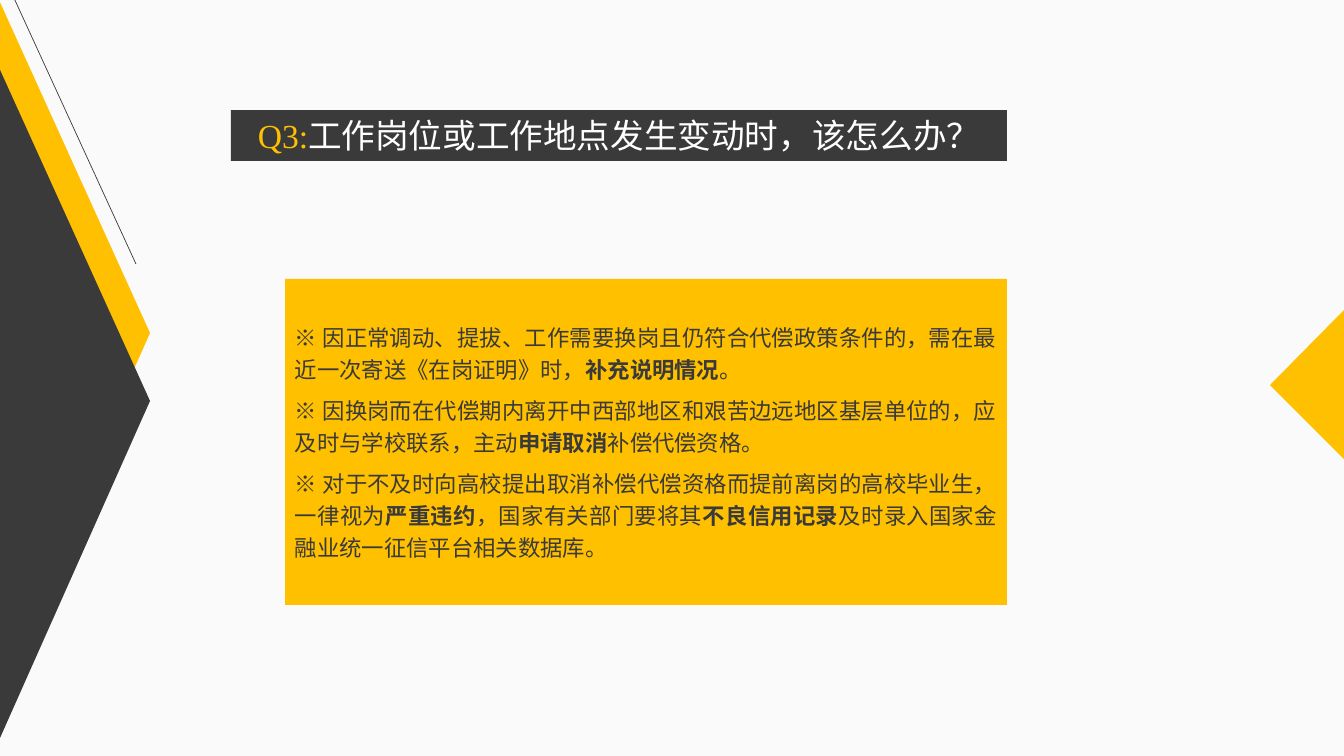
from dataclasses import dataclass

from lxml import etree
from pptx import Presentation
from pptx.dml.color import RGBColor
from pptx.enum.shapes import MSO_CONNECTOR, MSO_SHAPE
from pptx.enum.text import MSO_ANCHOR, PP_ALIGN
from pptx.oxml.ns import qn
from pptx.util import Pt

LINE = MSO_CONNECTOR.STRAIGHT
RECT = MSO_SHAPE.RECTANGLE
MIDDLE = MSO_ANCHOR.MIDDLE
CENTER, JUSTIFY = PP_ALIGN.CENTER, PP_ALIGN.JUSTIFY

WIDTH, HEIGHT = 1344, 756
SCALE = 12192000 / WIDTH
SANS, SERIF = "Noto Sans CJK SC", "Times New Roman"
DARK, AMBER, GOLD = "3A3A3A", "FFC001", "FFC000"
WHITE, PAPER = "FFFFFF", "FAFAFA"


@dataclass
class Outline:
    points: list[tuple[int, int]]
    color: str


@dataclass
class Box:
    left: int
    top: int
    width: int
    height: int


@dataclass
class Piece:
    text: str
    bold: bool = False
    color: str = DARK
    size: int = 16
    font: str = SANS


OUTLINES = [
    Outline([(-9, 0), (-1, 0), (150, 333), (-9, 690)], AMBER),
    Outline([(-9, 50), (150, 401), (-8, 756), (-9, 756)], DARK),
    Outline([(1344, 310), (1344, 459), (1270, 385)], AMBER),
]
TITLE_BOX = Box(231, 110, 776, 51)
PANEL_BOX = Box(285, 279, 722, 326)
BODY_BOX = Box(285, 314, 722, 255)

TITLE = [
    Piece("Q3:", color=GOLD, size=24, font=SERIF),
    Piece("工作岗位或工作地点发生变动时，该怎么办？", color=WHITE, size=24),
]
BODY = [
    [
        Piece("※ 因正常调动、提拔、工作需要换岗且仍符合代偿政策条件的，"
              "需在最近一次寄送《在岗证明》时，"),
        Piece("补充说明情况", True),
        Piece("。"),
    ],
    [
        Piece("※ 因换岗而在代偿期内离开中西部地区和艰苦边远地区基层单位的，"
              "应及时与学校联系，主动"),
        Piece("申请取消", True),
        Piece("补偿代偿资格。"),
    ],
    [
        Piece("※ 对于不及时向高校提出取消补偿代偿资格而提前离岗的高校毕业生，"
              "一律视为"),
        Piece("严重违约", True),
        Piece("，国家有关部门要将其"),
        Piece("不良信用记录", True),
        Piece("及时录入国家金融业统一征信平台相关数据库。"),
    ],
]


def px(value: int) -> int:
    return round(value * SCALE)


def rgb(color: str) -> RGBColor:
    return RGBColor.from_string(color)


def place(box: Box) -> list[int]:
    return [px(n) for n in (box.left, box.top, box.width, box.height)]


def paint(shape, color: str) -> None:
    shape.shadow.inherit = False
    shape.fill.solid()
    shape.fill.fore_color.rgb = rgb(color)
    shape.line.fill.background()


def draw_outline(shapes, item: Outline) -> None:
    start, *rest = item.points
    builder = shapes.build_freeform(*start, scale=SCALE)
    builder.add_line_segments(rest, close=True)
    paint(builder.convert_to_shape(), item.color)


def draw_rect(shapes, box: Box, color: str):
    rect = shapes.add_shape(RECT, *place(box))
    paint(rect, color)
    return rect


def draw_line(shapes, start: tuple[int, int], end: tuple[int, int]) -> None:
    line = shapes.add_connector(LINE, *[px(n) for n in start + end])
    line.line.color.rgb = rgb(DARK)
    line.line.width = Pt(0.5)
    etree.SubElement(line._element.spPr, qn("a:effectLst"))


def write(para, pieces: list[Piece], align: PP_ALIGN) -> None:
    para.alignment = align
    for piece in pieces:
        run = para.add_run()
        run.text = piece.text
        font = run.font
        font.size = Pt(piece.size)
        font.bold = piece.bold
        font.color.rgb = rgb(piece.color)
        font.name = piece.font
        # East Asian glyphs take their own typeface entry
        etree.SubElement(run._r.get_or_add_rPr(), qn("a:ea"), typeface=SANS)


def main() -> None:
    deck = Presentation()
    deck.slide_width, deck.slide_height = px(WIDTH), px(HEIGHT)
    slide = deck.slides.add_slide(deck.slide_layouts[6])
    slide.background.fill.solid()
    slide.background.fill.fore_color.rgb = rgb(PAPER)
    shapes = slide.shapes

    # Side ornaments
    for item in OUTLINES:
        draw_outline(shapes, item)
    draw_line(shapes, (136, 264), (14, -2))

    # Question bar
    title = draw_rect(shapes, TITLE_BOX, DARK).text_frame
    title.word_wrap = True
    title.vertical_anchor = MIDDLE
    write(title.paragraphs[0], TITLE, CENTER)

    # Answer panel
    group = shapes.add_group_shape()
    draw_rect(group.shapes, PANEL_BOX, GOLD)
    frame = group.shapes.add_textbox(*place(BODY_BOX)).text_frame
    frame.word_wrap = True
    for index, pieces in enumerate(BODY):
        para = frame.add_paragraph() if index else frame.paragraphs[0]
        para.line_spacing = 1.2
        para.space_after = Pt(6 if index < len(BODY) - 1 else 0)
        write(para, pieces, JUSTIFY)

    deck.save("out.pptx")


if __name__ == "__main__":
    main()
